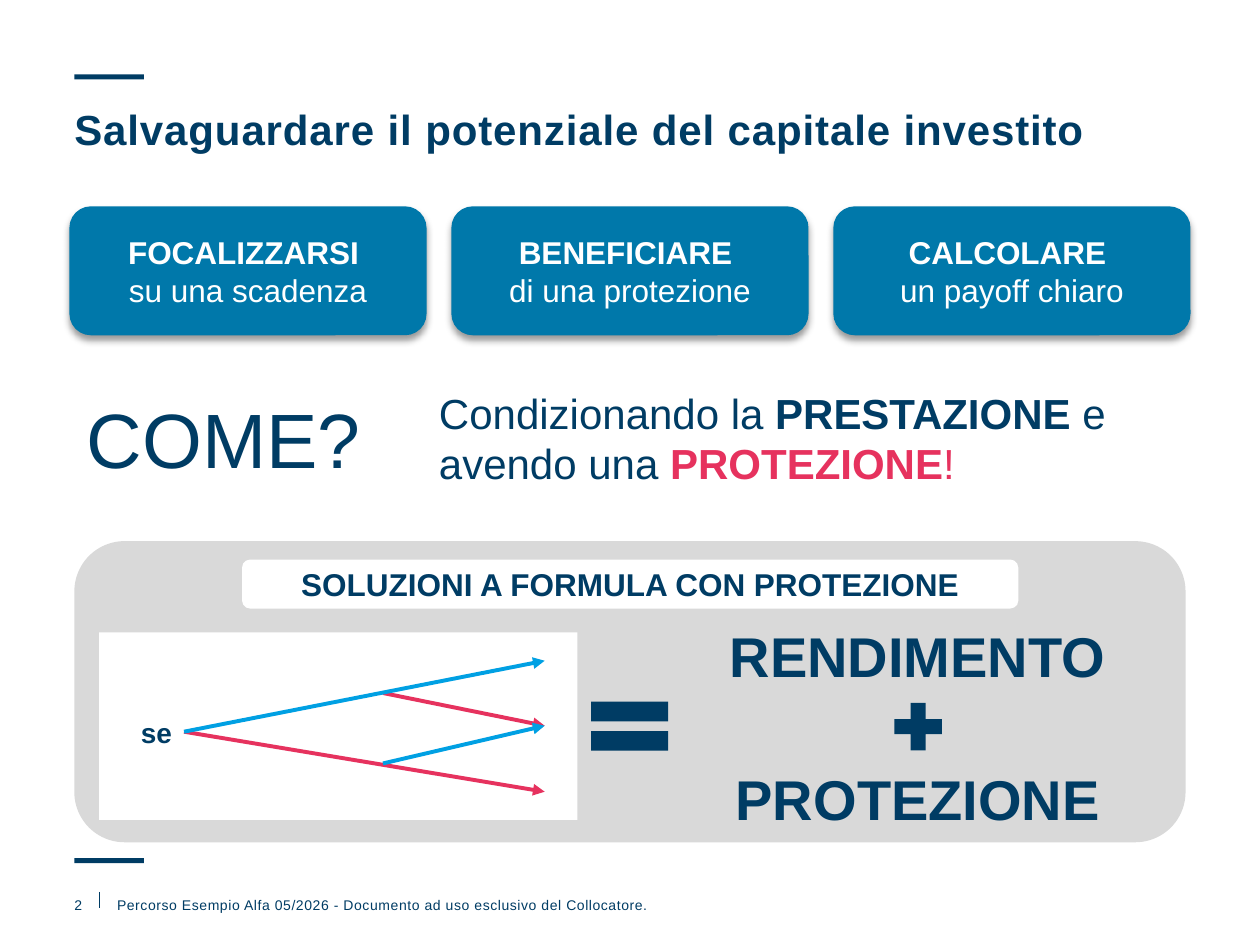
from lxml import etree
from pptx import Presentation
from pptx.dml.color import RGBColor
from pptx.enum.shapes import MSO_CONNECTOR, MSO_SHAPE
from pptx.enum.text import MSO_ANCHOR, PP_ALIGN
from pptx.oxml import parse_xml
from pptx.oxml.ns import nsdecls, qn
from pptx.util import Cm, Pt

RECTANGLE = MSO_SHAPE.RECTANGLE
ROUNDED = MSO_SHAPE.ROUNDED_RECTANGLE
EQUAL = MSO_SHAPE.MATH_EQUAL
PLUS = MSO_SHAPE.MATH_PLUS
STRAIGHT = MSO_CONNECTOR.STRAIGHT
TOP, MIDDLE = MSO_ANCHOR.TOP, MSO_ANCHOR.MIDDLE
LEFT, CENTER = PP_ALIGN.LEFT, PP_ALIGN.CENTER

NAVY, BLUE, SKY, PINK = "003C64", "0078AA", "00A0E3", "E6325E"
GREY, WHITE = "D9D9D9", "FFFFFF"
color = RGBColor.from_string

presentation = Presentation()
presentation.slide_width, presentation.slide_height = Cm(25.4), Cm(19.05)
slide = presentation.slides.add_slide(presentation.slide_layouts[5])
shapes = slide.shapes


def add_block(kind, fill, left, top, width, height):
    """Add a filled preset shape, or a text box when kind is None."""
    box = [Cm(value) for value in (left, top, width, height)]
    if kind is None:
        return shapes.add_textbox(*box)
    shape = shapes.add_shape(kind, *box)
    shape.shadow.inherit = False
    shape.fill.solid()
    shape.fill.fore_color.rgb = color(fill)
    shape.line.fill.background()
    return shape


def write(shape, paragraphs, size, align=CENTER, anchor=MIDDLE, margin=True, spacing=0):
    """Fill a shape with paragraphs, each a list of (text, bold, colour) runs."""
    frame = shape.text_frame
    frame.word_wrap = True
    frame.vertical_anchor = anchor
    if not margin:
        frame.margin_left = frame.margin_right = frame.margin_top = frame.margin_bottom = 0
    for index, pieces in enumerate(paragraphs):
        paragraph = frame.add_paragraph() if index else frame.paragraphs[0]
        paragraph.alignment = align
        for text, bold, hex_color in pieces:
            run = paragraph.add_run()
            run.text = text
            run.font.name, run.font.size, run.font.bold = "Arial", Pt(size), bold
            run.font.color.rgb = color(hex_color)
            if spacing:
                run.font._element.set("spc", str(spacing))


# Title
title = shapes.title
title.left, title.top, title.width, title.height = Cm(1.5), Cm(2.21), Cm(22.4), Cm(1.07)
write(title, [[("Salvaguardare il potenziale del capitale investito", True, NAVY)]],
      24, LEFT, TOP, margin=False, spacing=50)
title.text_frame.paragraphs[0].line_spacing = 0.9

# Accent bars
for top in (1.5, 17.3):
    add_block(RECTANGLE, NAVY, 1.5, top, 1.4, 0.1)

# Footer
footer = add_block(None, None, 2.36, 18.08, 16.76, 0.61)
write(footer, [[("Percorso Esempio Alfa 05/2026 - Documento ad uso esclusivo del Collocatore.",
                 False, NAVY)]], 8, LEFT, TOP, margin=False, spacing=30)
page_number = add_block(None, None, 1.5, 18.08, 0.5, 0.5)
write(page_number, [[("2", False, NAVY)]], 8, LEFT, TOP, margin=False)

# Three cards with a soft shadow
cards = [("FOCALIZZARSI ", "su una scadenza"),
         ("BENEFICIARE ", "di una protezione"),
         ("CALCOLARE ", "un payoff chiaro")]
for index, (heading, detail) in enumerate(cards):
    card = add_block(ROUNDED, BLUE, 1.4 + 7.7 * index, 4.16, 7.2, 2.6)
    write(card, [[(heading, True, WHITE)], [(detail, False, WHITE)]], 18)
    effects = card._element.spPr.find(qn("a:effectLst"))
    effects.append(parse_xml(
        f'<a:outerShdw {nsdecls("a")} blurRad="{Pt(4)}" dist="{Pt(3)}" dir="5400000" '
        'rotWithShape="0"><a:srgbClr val="000000"><a:alpha val="40000"/></a:srgbClr>'
        '</a:outerShdw>'))

# Question and answer
question = add_block(None, None, 1.5, 7.76, 7.11, 2.13)
write(question, [[("COME?", False, NAVY)]], 44, LEFT)
answer = add_block(RECTANGLE, WHITE, 8.6, 7.67, 15.39, 2.31)
write(answer, [
    [("Condizionando la ", False, NAVY), ("PRESTAZIONE ", True, NAVY), ("e", False, NAVY)],
    [("avendo una ", False, NAVY), ("PROTEZIONE", True, PINK), ("!", False, PINK)],
], 24, LEFT)

# Solution panel
add_block(ROUNDED, GREY, 1.5, 10.91, 22.4, 6.07)
panel_label = add_block(ROUNDED, WHITE, 4.88, 11.28, 15.65, 0.99)
write(panel_label, [[("SOLUZIONI A FORMULA CON PROTEZIONE", True, NAVY)]], 18)
add_block(EQUAL, NAVY, 11.64, 13.8, 2.11, 1.68)
add_block(PLUS, NAVY, 17.86, 14, 1.3, 1.3)
for text, left, top, width in (("RENDIMENTO", 14.36, 12.4, 8.28),
                               ("PROTEZIONE", 13.54, 15.27, 9.93)):
    write(add_block(None, None, left, top, width, 1.63), [[(text, True, NAVY)]], 32)

# Scenario tree
add_block(RECTANGLE, WHITE, 2, 12.75, 9.64, 3.78)
write(add_block(None, None, 2.57, 14.3, 1.17, 0.94), [[("se", True, NAVY)]], 16)

# Tree arrows and the footer divider
lines = [(3.71, 14.75, 10.98, 15.96, PINK, 2.25),
         (7.72, 13.97, 10.98, 14.63, PINK, 2.25),
         (7.72, 15.39, 10.98, 14.63, SKY, 2.25),
         (3.71, 14.75, 10.98, 13.32, SKY, 2.25),
         (2, 17.98, 2, 18.31, NAVY, 0.5)]
for *points, hex_color, weight in lines:
    line = shapes.add_connector(STRAIGHT, *[Cm(value) for value in points])
    line.line.color.rgb = color(hex_color)
    line.line.width = Pt(weight)
    if weight > 1:
        etree.SubElement(line.line._get_or_add_ln(), qn("a:tailEnd"), type="triangle")
    etree.SubElement(line._element.spPr, qn("a:effectLst"))

presentation.save("out.pptx")
